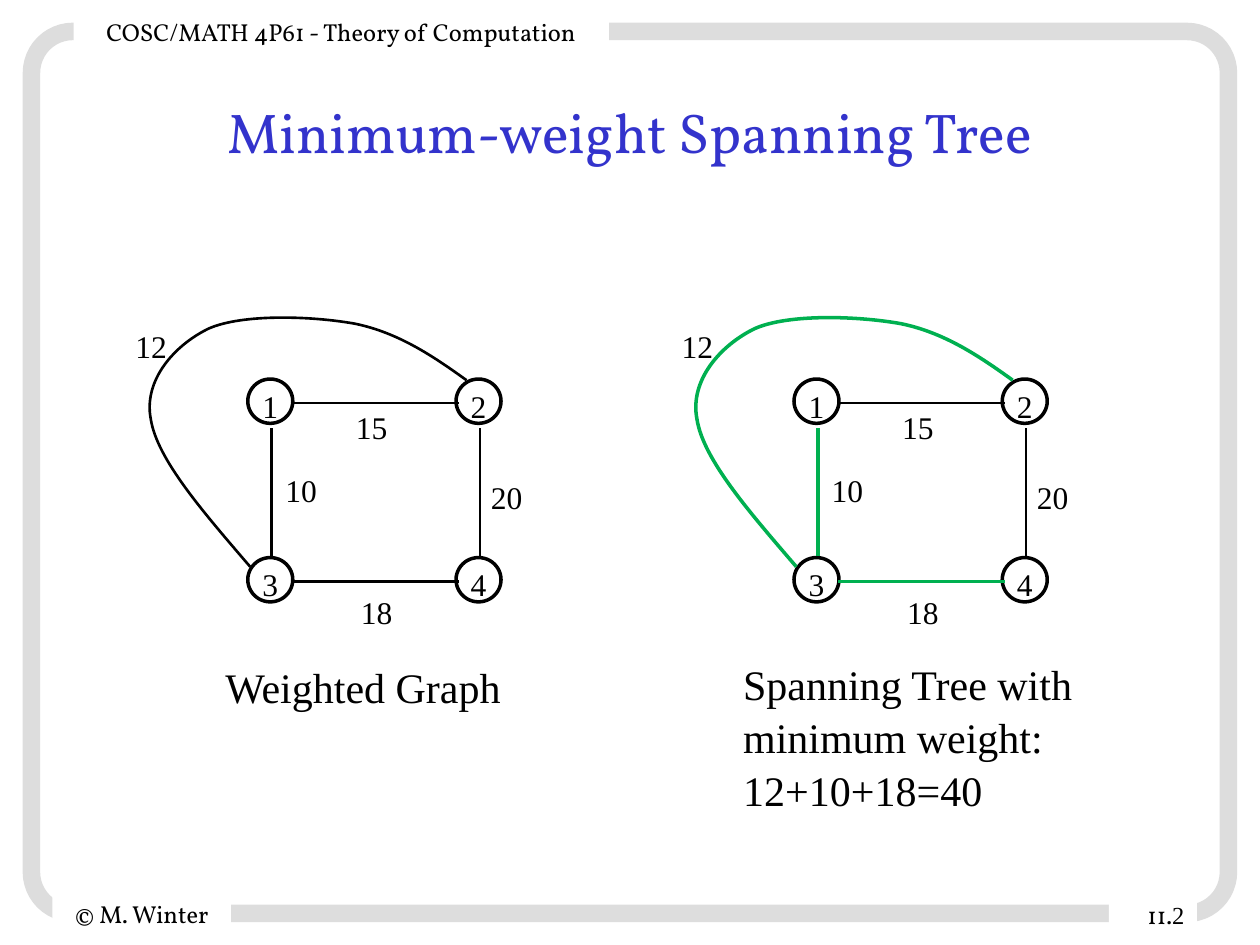
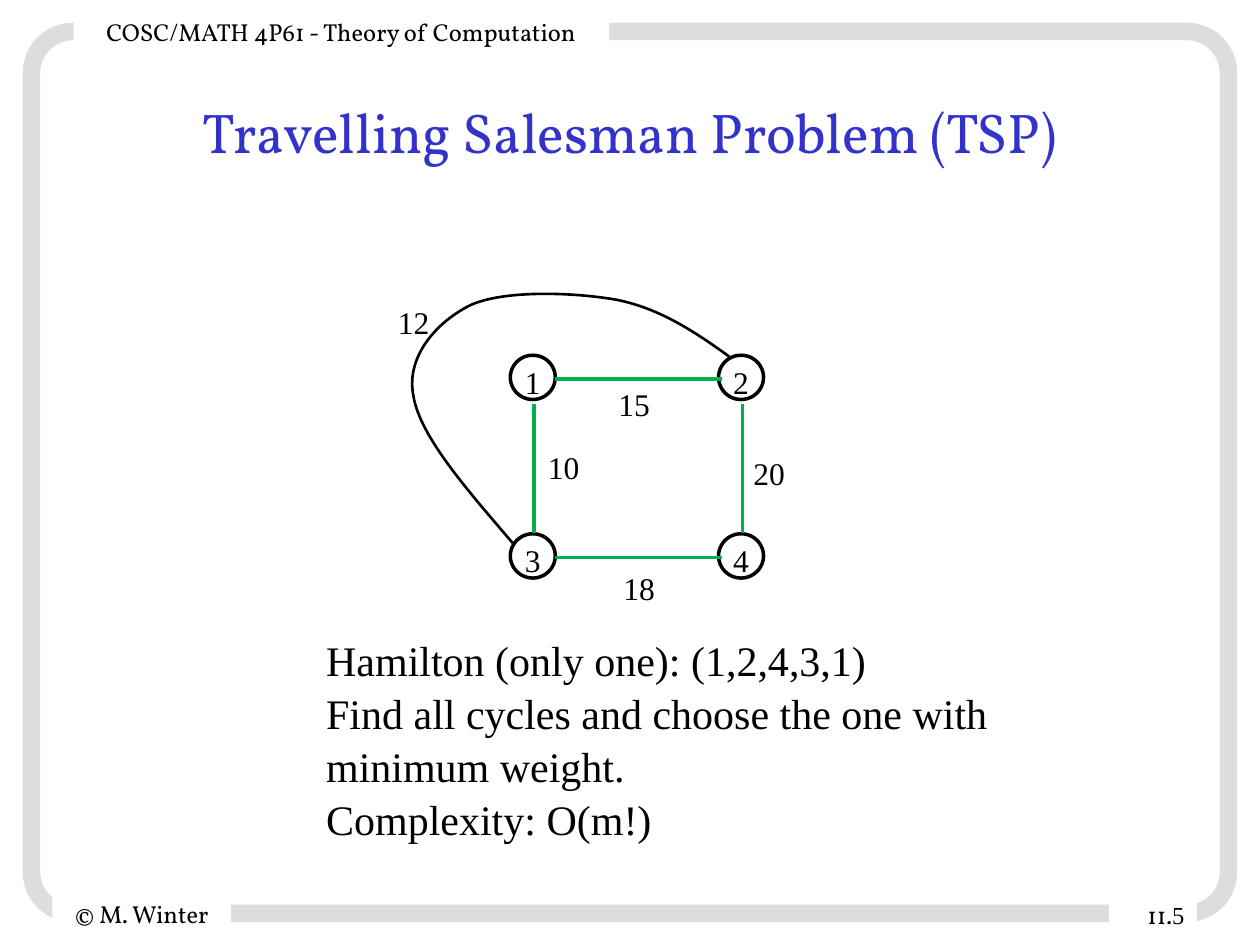
from lxml.etree import SubElement
from pptx import Presentation
from pptx.dml.color import RGBColor
from pptx.enum.shapes import MSO_CONNECTOR, MSO_SHAPE
from pptx.enum.text import MSO_ANCHOR, MSO_AUTO_SIZE, PP_ALIGN
from pptx.oxml.ns import qn
from pptx.util import Pt

# Shared look
BLACK, WHITE, GREY = "000000", "FFFFFF", "DDDDDD"
BLUE, GREEN = "3333CC", "00B050"
SERIF, BRAND = "Times New Roman", "Vollkorn"

# Graph geometry, measured from the top left of node 1
STEP_X, STEP_Y = 119, 102
NODE_W, NODE_H = 25.7, 25.3
NODES = {"1": (0, 0), "2": (STEP_X, 0), "3": (0, STEP_Y), "4": (STEP_X, STEP_Y)}
ACROSS, DOWN = (25.4, 13.7, 120.8, 13.7), (13.7, 28, 13.7, 101.3)
LINES = {
    "12": (ACROSS, 0, 0),
    "13": (DOWN, 0, 0),
    "24": (DOWN, STEP_X, 0),
    "34": (ACROSS, 0, STEP_Y),
}
ARC_START = (125, 0.7)
ARC = [  # two control points and an end point for each piece
    [(106, -13), (86, -26.5), (61.2, -31.6)],
    [(36.7, -36), (-2.9, -37.4), (-22.3, -28.8)],
    [(-41.8, -19.4), (-59.8, 0.7), (-55.4, 23)],
    [(-51.8, 46), (-25.2, 76.3), (1.4, 107.3)],
]
WEIGHTS = [
    ("15", 54.7, 12.2),
    ("12", -71.3, -34.6),
    ("10", 14.4, 48.2),
    ("20", 131.8, 51.8),
    ("18", 57.6, 117.4),
]

# Per slide: title, number, graphs (origin, green edges, caption box, caption)
PAGES = [
    ("Minimum-weight Spanning Tree", "2", [
        (141.6, 216.6, [], (121.7, 373, 183.6, 36), ["Weighted Graph"]),
        (453.7, 216.6, ["13", "34", "23"], (417.6, 371.5, 237.6, 94.3),
         ["Spanning Tree with minimum weight: 12+10+18=40"]),
    ]),
    ("Travelling Salesman Problem (TSP)", "5", [
        (291.6, 203, ["12", "13", "24", "34"], (179.3, 357.8, 428.4, 123.8),
         ["Hamilton (only one): (1,2,4,3,1)",
          "Find all cycles and choose the one with minimum weight.",
          "Complexity: O(m!)"]),
    ]),
]


def write(para, text, size, face=SERIF, colour=BLACK):
    run = para.add_run()
    run.text = text
    run.font.size, run.font.name = Pt(size), face
    run.font.color.rgb = RGBColor.from_string(colour)
    if face == SERIF:
        para.line_spacing = 1.05


def draw(item, line=None, width=0, fill=None):
    """Set line and fill, and switch the shadow off."""
    if fill:
        item.fill.solid()
        item.fill.fore_color.rgb = RGBColor.from_string(fill)
    elif hasattr(item, "fill"):
        item.fill.background()
    if line:
        item.line.color.rgb = RGBColor.from_string(line)
        item.line.width = Pt(width)
    else:
        item.line.fill.background()
    SubElement(item.element.spPr, qn("a:effectLst"))


deck = Presentation()
deck.slide_width, deck.slide_height = Pt(720), Pt(540)
base = deck.slide_layouts[5]
slides = [deck.slides.add_slide(base) for page in PAGES]

# Title place, set once on the layout
head = base.placeholders[0]
head.left, head.top, head.width, head.height = Pt(54), Pt(48), Pt(612), Pt(54)

# Frame and bands, moved to the layout
shapes = slides[0].shapes
frame = shapes.add_shape(MSO_SHAPE.ROUNDED_RECTANGLE, Pt(18), Pt(18), Pt(684), Pt(504))
frame.adjustments[0] = 0.047
draw(frame, GREY, 10)
base.shapes.element.append(frame.element)
for text, x, y, w in [
    ("© M. Winter", 30, 510, 102),
    ("COSC/MATH 4P61 - Theory of Computation", 42, 6, 306),
]:
    band = shapes.add_shape(MSO_SHAPE.RECTANGLE, Pt(x), Pt(y), Pt(w), Pt(24))
    draw(band, fill=WHITE)
    write(band.text_frame.paragraphs[0], text, 14, BRAND)
    base.shapes.element.append(band.element)

for slide, (title, number, graphs) in zip(slides, PAGES):
    # Title
    body = slide.shapes.title.text_frame
    body.auto_size = MSO_AUTO_SIZE.NONE
    body.vertical_anchor = MSO_ANCHOR.MIDDLE
    body.paragraphs[0].alignment = PP_ALIGN.CENTER
    write(body.paragraphs[0], title, 32, BRAND, BLUE)

    # Page number
    band = slide.shapes.add_shape(MSO_SHAPE.RECTANGLE, Pt(633.6), Pt(510), Pt(50.4), Pt(24))
    draw(band, fill=WHITE)
    para = band.text_frame.paragraphs[0]
    para.alignment = PP_ALIGN.RIGHT
    write(para, "11.", 14, BRAND)
    write(para, number, 14)

    for left, top, green, place, words in graphs:
        group = slide.shapes.add_group_shape().shapes

        # Nodes
        for name, (x, y) in NODES.items():
            node = group.add_shape(MSO_SHAPE.OVAL, Pt(left + x), Pt(top + y),
                                   Pt(NODE_W), Pt(NODE_H))
            draw(node, BLACK, 2)
            body = node.text_frame
            body.word_wrap = False
            body.margin_left = body.margin_right = body.margin_bottom = 0
            body.margin_top = Pt(4)
            body.paragraphs[0].alignment = PP_ALIGN.CENTER
            write(body.paragraphs[0], name, 18)

        # Straight edges
        for name, ((x1, y1, x2, y2), dx, dy) in LINES.items():
            edge = group.add_connector(
                MSO_CONNECTOR.STRAIGHT, Pt(left + x1 + dx), Pt(top + y1 + dy),
                Pt(left + x2 + dx), Pt(top + y2 + dy))
            draw(edge, *((GREEN, 2) if name in green else (BLACK, 1.5)))

        # Curved edge: outline through the end points, then bent into curves
        pen = group.build_freeform(Pt(left + ARC_START[0]), Pt(top + ARC_START[1]))
        pen.add_line_segments([(Pt(left + x), Pt(top + y)) for *_, (x, y) in ARC],
                              close=False)
        arc = pen.convert_to_shape()
        draw(arc, *((GREEN, 2) if "23" in green else (BLACK, 1.5)))
        trace = arc.element.find(".//" + qn("a:path"))
        for old, piece in zip(trace.findall(qn("a:lnTo")), ARC):
            trace.remove(old)
            curve = SubElement(trace, qn("a:cubicBezTo"))
            for x, y in piece:
                SubElement(curve, qn("a:pt"), x=str(Pt(left + x) - arc.left),
                           y=str(Pt(top + y) - arc.top))

        # Weights and caption
        notes = [(group, (left + x, top + y, 36, 28.8), 18, [text])
                 for text, x, y in WEIGHTS]
        notes.append((slide.shapes, place, 24, words))
        for home, spot, size, texts in notes:
            body = home.add_textbox(*map(Pt, spot)).text_frame
            body.word_wrap = True
            for i, text in enumerate(texts):
                write(body.add_paragraph() if i else body.paragraphs[0], text, size)

deck.save("out.pptx")
